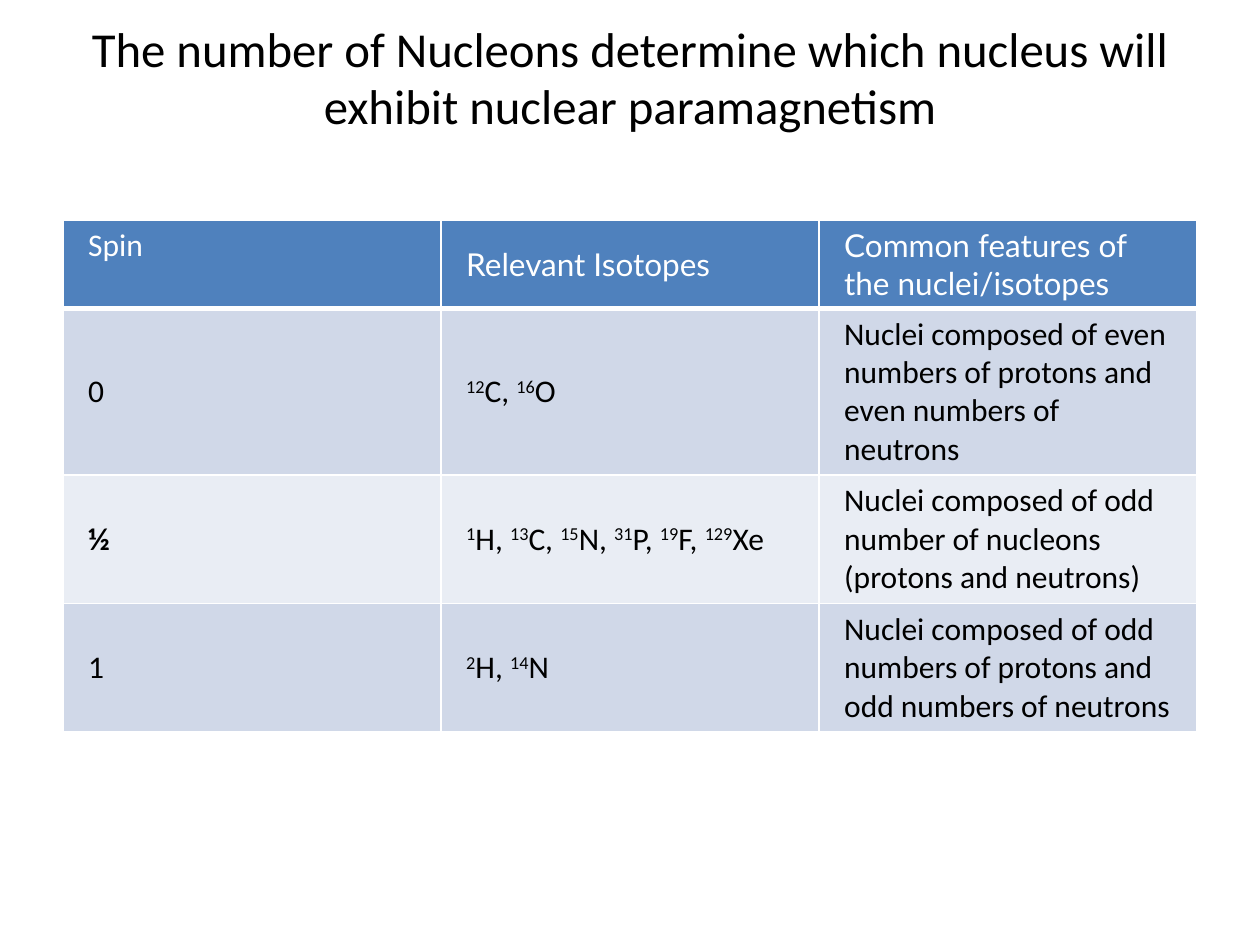
from lxml.etree import SubElement
from pptx import Presentation
from pptx.dml.color import RGBColor as RGB
from pptx.enum.text import MSO_ANCHOR as ANCHOR, PP_ALIGN as ALIGN
from pptx.oxml.ns import qn
from pptx.util import Inches, Pt

THEME = dict(
    ink="000000", paper="FFFFFF", head="4F81BD", bands=("D0D8E8", "E9EDF4"),
    font="Calibri", head_font="Lato", title=27.9, body=18, rule=1, head_rule=3,
)


def write(tf, text, size=THEME["body"], font=THEME["font"], color=THEME["ink"],
          bold=False, align=ALIGN.LEFT, spacing=None):
    p = tf.paragraphs[0]
    p.alignment = align
    p.line_spacing = spacing
    for i, part in enumerate(text.split("^")):
        if not part:
            continue
        r = p.add_run()
        r.text = part
        r.font.size, r.font.name, r.font.bold = Pt(size), font, bold
        r.font.color.rgb = RGB.from_string(color)
        if i % 2:
            r.font._element.set("baseline", "30000")


def border(cell, widths):
    pr = cell._tc.get_or_add_tcPr()
    for i, (side, width) in enumerate(widths.items()):
        ln = pr.makeelement(qn(f"a:ln{side}"), w=str(Pt(width)))
        fill = SubElement(ln, qn("a:solidFill"))
        SubElement(fill, qn("a:srgbClr"), val=THEME["paper"])
        pr.insert(i, ln)


prs = Presentation()
prs.slide_width, prs.slide_height = Inches(10), Inches(7.5)
W, H = prs.slide_width, prs.slide_height
s = prs.slides.add_slide(prs.slide_layouts[6])

left, width = int(W * 0.05), int(W * 0.9)
sp = s.shapes.add_textbox(left, int(H * 0.04), width, int(H / 6))
tf = sp.text_frame
tf.word_wrap = True
tf.vertical_anchor = ANCHOR.MIDDLE
tf.margin_top, tf.margin_bottom = 0, int(H * 0.08)
write(tf, "The number of Nucleons determine which nucleus will exhibit nuclear paramagnetism",
      size=THEME["title"], align=ALIGN.CENTER, spacing=0.97)

rows = [
    ("Spin", "Relevant Isotopes", "Common features of the nuclei/isotopes"),
    ("0", "^12^C,\u00a0^16^O".replace("\u00a0", chr(160)),
     "Nuclei composed of even numbers of protons and even numbers of neutrons"),
    ("½", "^1^H, ^13^C, ^15^N, ^31^P, ^19^F, ^129^Xe",
     "Nuclei composed of odd number of nucleons (protons and neutrons)"),
    ("1", "^2^H, ^14^N",
     "Nuclei composed of odd numbers of protons and odd numbers of neutrons"),
]
rows[1] = ("0", "^12^C, ^16^O", rows[1][2])
heights = [Inches(h) for h in (0.69, 1.32, 1.02, 1.02)]
table = s.shapes.add_table(len(rows), 3, left, int(H * 0.7 / 3), width, sum(heights)).table

for i, (row, height) in enumerate(zip(rows, heights)):
    table.rows[i].height = height
    head = i == 0
    for j, text in enumerate(row):
        cell = table.cell(i, j)
        cell.fill.solid()
        cell.fill.fore_color.rgb = RGB.from_string(
            THEME["head"] if head else THEME["bands"][(i - 1) % 2])
        cell.margin_left = cell.margin_right = int(W * 0.02)
        cell.margin_top = cell.margin_bottom = int(W * 0.005)
        cell.vertical_anchor = ANCHOR.TOP if head and j == 0 else ANCHOR.MIDDLE
        rule = THEME["rule"]
        border(cell, dict(L=rule, R=rule, T=THEME["head_rule"] if i == 1 else rule,
                          B=THEME["head_rule"] if head else rule))
        write(cell.text_frame, text, bold=text == "½",
              font=THEME["head_font"] if head and j else THEME["font"],
              color=THEME["paper"] if head else THEME["ink"])

prs.save("out.pptx")
